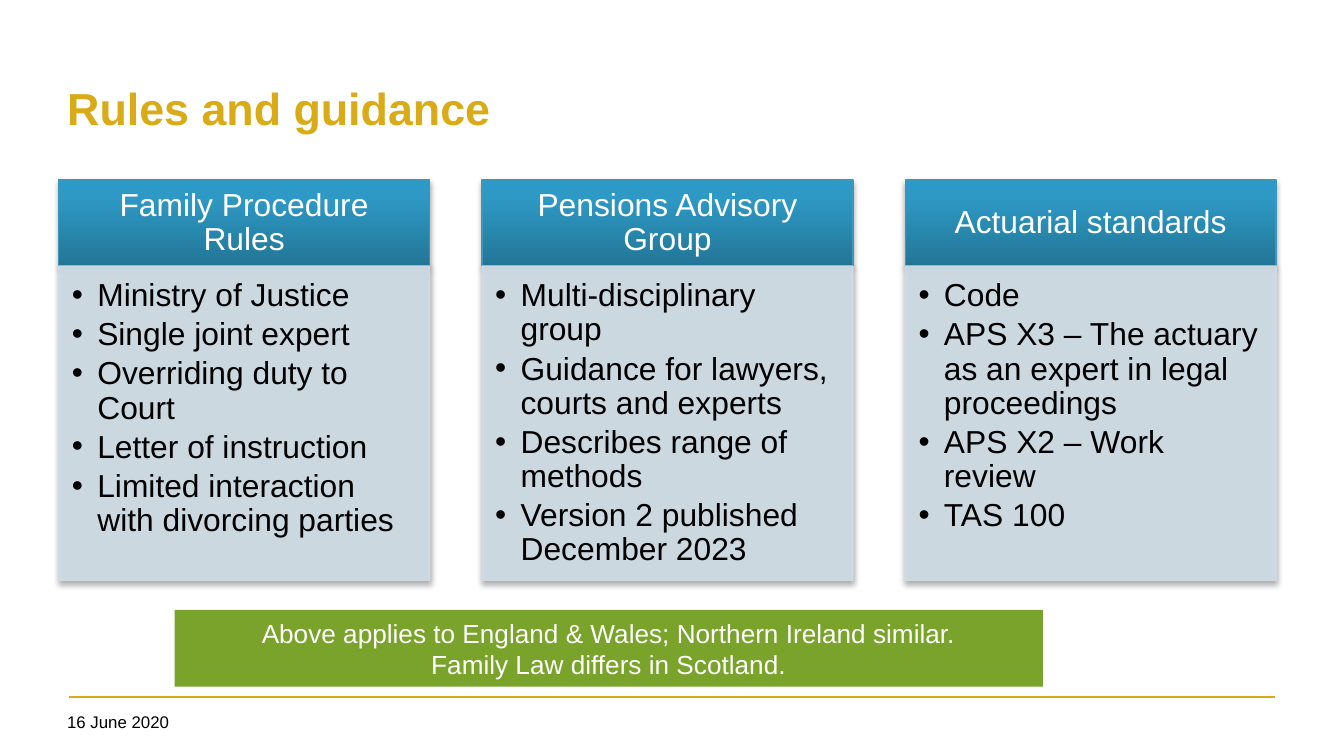
from dataclasses import dataclass
from typing import Any

import lxml.etree
import pptx
import pptx.dml.color
import pptx.enum.shapes
import pptx.enum.text
import pptx.oxml
import pptx.oxml.ns
import pptx.util
from copy import deepcopy

Cm = pptx.util.Cm
Pt = pptx.util.Pt
qn = pptx.oxml.ns.qn
ALIGN = pptx.enum.text.PP_ALIGN
ANCHOR = pptx.enum.text.MSO_ANCHOR

COLOURS = {
    "gold": "D9AB16", "green": "79A32A", "white": "FFFFFF", "black": "000000",
    "panel": "CFDDE6", "edge": "4096B8",
    "deep": "227697", "bright": "2D99C4", "top": "2A9BC8",
}
SIDES = ("margin_left", "margin_top", "margin_right", "margin_bottom")
COLUMN_LEFT, COLUMN_PITCH, COLUMN_WIDTH = 1.11, 8.0, 7.01
HEADER_TOP, HEADER_HEIGHT, BODY_HEIGHT = 3.4, 1.63, 5.94


@dataclass(frozen=True)
class Box:
    """Place of an object in centimetres."""
    left: float
    top: float
    width: float
    height: float

    def lengths(self) -> list[pptx.util.Length]:
        """Return the place as lengths."""
        return [Cm(value) for value in (self.left, self.top, self.width, self.height)]


@dataclass(frozen=True)
class Style:
    """Look of the text in a box."""
    size: float
    colour: str
    bold: bool = False
    align: Any = ALIGN.LEFT
    anchor: Any = ANCHOR.TOP
    insets: tuple[float, ...] = (0.18, 0.1, 0.18, 0.1)
    line_spacing: float = 1.0
    space_after: float = 0
    bullet: bool = False


@dataclass(frozen=True)
class Column:
    """Heading and points of one column."""
    heading: str
    points: tuple[str, ...]


TITLE = Style(24, "gold", bold=True, anchor=ANCHOR.MIDDLE)
DATE = Style(9, "black")
HEADING = Style(17, "white", align=ALIGN.CENTER, anchor=ANCHOR.MIDDLE,
                insets=(0.33, 0.2, 0.33, 0.2), line_spacing=0.9)
POINTS = Style(17, "black", insets=(0.25, 0.25, 0.33, 0.38),
               line_spacing=0.9, space_after=2.55, bullet=True)
NOTE = Style(14, "white", align=ALIGN.CENTER, anchor=ANCHOR.MIDDLE,
             insets=(0.25, 0.13, 0.25, 0.13))

COLUMNS = (
    Column("Family Procedure Rules", (
        "Ministry of Justice", "Single joint expert", "Overriding duty to Court",
        "Letter of instruction", "Limited interaction with divorcing parties")),
    Column("Pensions Advisory Group", (
        "Multi-disciplinary group", "Guidance for lawyers, courts and experts",
        "Describes range of methods", "Version 2 published December 2023")),
    Column("Actuarial standards", (
        "Code", "APS X3 – The actuary as an expert in legal proceedings",
        "APS X2 – Work review", "TAS 100")),
)


def rgb(name: str) -> pptx.dml.color.RGBColor:
    """Return a named colour."""
    return pptx.dml.color.RGBColor.from_string(COLOURS[name])


def apply(target: Any, values: dict[str, Any]) -> None:
    """Set several attributes of an object."""
    for name, value in values.items():
        setattr(target, name, value)


def add_bullet(para: Any) -> None:
    """Give a paragraph a hanging round bullet."""
    properties = para._p.get_or_add_pPr()
    properties.set("marL", str(Cm(0.48)))
    properties.set("indent", str(-Cm(0.48)))
    lxml.etree.SubElement(properties, qn("a:buFont"), typeface="Arial")
    lxml.etree.SubElement(properties, qn("a:buChar"), char="•")


def write(shape: Any, texts: tuple[str, ...], style: Style) -> None:
    """Fill a shape with paragraphs of one style."""
    frame = shape.text_frame
    apply(frame, {"word_wrap": True, "vertical_anchor": style.anchor})
    apply(frame, {side: Cm(inset) for side, inset in zip(SIDES, style.insets)})
    for index, text in enumerate(texts):
        para = frame.add_paragraph() if index else frame.paragraphs[0]
        para.text = text
        apply(para, {"alignment": style.align, "line_spacing": style.line_spacing,
                     "space_after": Pt(style.space_after)})
        if style.bullet:
            add_bullet(para)
        for span in para.runs:
            apply(span.font, {"name": "Arial", "size": Pt(style.size), "bold": style.bold})
            span.font.color.rgb = rgb(style.colour)


def add_text(page: Any, box: Box, text: str, style: Style) -> None:
    """Add a plain text box."""
    write(page.shapes.add_textbox(*box.lengths()), (text,), style)


def add_panel(page: Any, box: Box) -> Any:
    """Add a rectangle without shadow."""
    shape = page.shapes.add_shape(pptx.enum.shapes.MSO_SHAPE.RECTANGLE, *box.lengths())
    shape.shadow.inherit = False
    return shape


def fill_gradient(shape: Any) -> None:
    """Shade a heading from dark at the bottom to bright at the top."""
    shape.fill.gradient()
    shape.fill.gradient_angle = 90
    last = shape.fill.gradient_stops[1]._gs
    last.addnext(deepcopy(last))
    stops = ((0, "deep"), (0.8, "bright"), (1, "top"))
    for stop, (position, name) in zip(shape.fill.gradient_stops, stops):
        stop.position = position
        stop.color.rgb = rgb(name)


def set_alpha(holder: Any, percent: int) -> None:
    """Make every colour inside an element partly transparent."""
    for colour in holder.iter(qn("a:srgbClr")):
        lxml.etree.SubElement(colour, qn("a:alpha"), val=str(percent * 1000))


def outline(shape: Any, name: str) -> None:
    """Give a shape a thin line."""
    shape.line.width = Pt(0.75)
    shape.line.color.rgb = rgb(name)


def add_shadow(shape: Any) -> None:
    """Give a shape a soft shadow below."""
    effects = shape._element.spPr.find(qn("a:effectLst"))
    shadow = lxml.etree.SubElement(
        effects, qn("a:outerShdw"), blurRad=str(Pt(3.1)), dist=str(Pt(1.8)),
        dir="5400000", rotWithShape="0")
    lxml.etree.SubElement(shadow, qn("a:srgbClr"), val=COLOURS["black"])
    set_alpha(shadow, 35)


def add_column(page: Any, left: float, column: Column) -> None:
    """Add a heading with its list of points."""
    header = add_panel(page, Box(left, HEADER_TOP, COLUMN_WIDTH, HEADER_HEIGHT))
    fill_gradient(header)
    outline(header, "edge")
    add_shadow(header)
    write(header, (column.heading,), HEADING)
    body = add_panel(page, Box(left, HEADER_TOP + HEADER_HEIGHT, COLUMN_WIDTH, BODY_HEIGHT))
    body.fill.solid()
    body.fill.fore_color.rgb = rgb("panel")
    outline(body, "panel")
    set_alpha(body._element.spPr, 90)
    add_shadow(body)
    write(body, column.points, POINTS)


def add_rule(page: Any, left: float, right: float, top: float) -> None:
    """Add the horizontal footer line."""
    rule = page.shapes.add_connector(
        pptx.enum.shapes.MSO_CONNECTOR.STRAIGHT, Cm(left), Cm(top), Cm(right), Cm(top))
    rule.line.width = Pt(1)
    rule.line.color.rgb = rgb("gold")
    lxml.etree.SubElement(rule._element.spPr, qn("a:effectLst"))


def main() -> None:
    """Build the slide and save it."""
    deck = pptx.Presentation()
    apply(deck, {"slide_width": Cm(25.4), "slide_height": Cm(14.29)})
    page = deck.slides.add_slide(deck.slide_layouts[6])
    add_rule(page, 1.3, 24.1, 13.18)
    add_text(page, Box(1.09, 0.84, 23.04, 2.39), "Rules and guidance", TITLE)
    for index, column in enumerate(COLUMNS):
        add_column(page, COLUMN_LEFT + index * COLUMN_PITCH, column)
    add_text(page, Box(1.09, 13.36, 5.59, 0.69), "16 June 2020", DATE)
    note = add_panel(page, Box(3.3, 11.53, 16.41, 1.45))
    note.fill.solid()
    note.fill.fore_color.rgb = rgb("green")
    note.line.fill.background()
    write(note, ("Above applies to England & Wales; Northern Ireland similar.\v"
                 "Family Law differs in Scotland.",), NOTE)
    deck.save("out.pptx")


if __name__ == "__main__":
    main()
